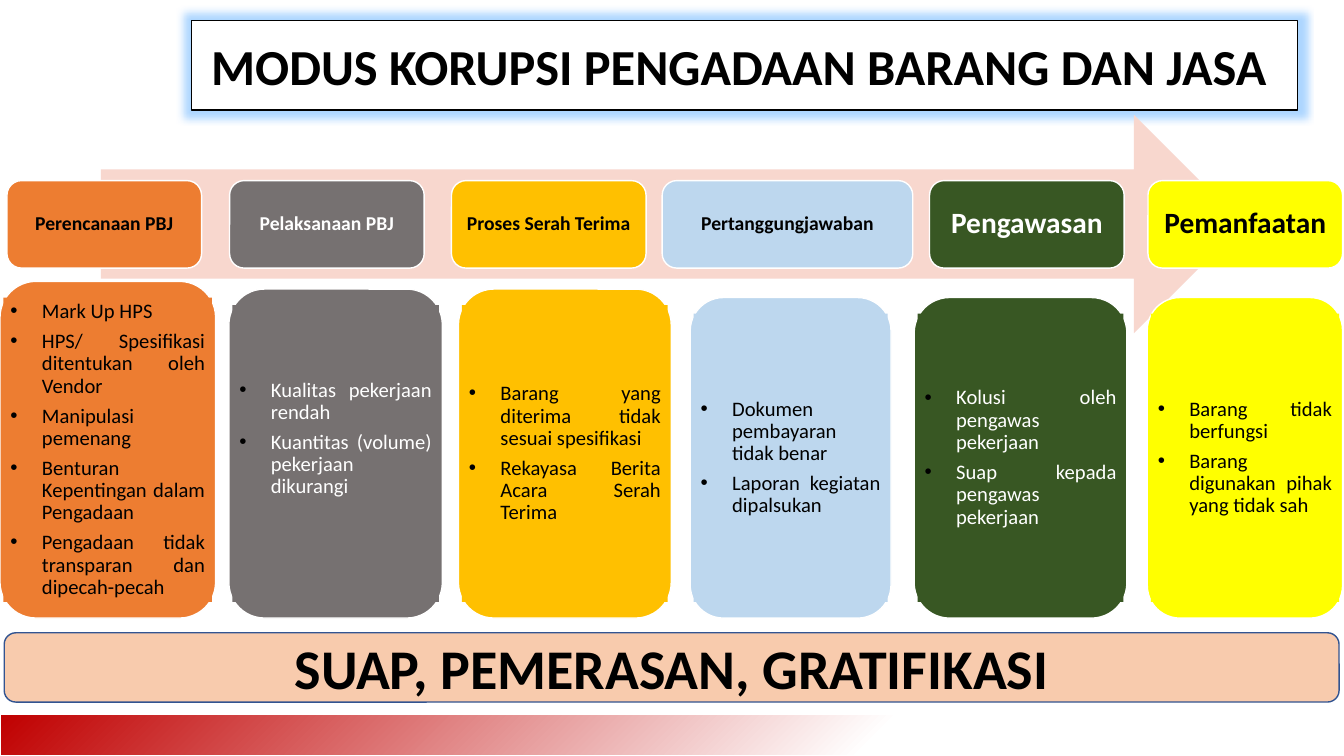
from lxml.etree import SubElement
from pptx import Presentation
from pptx.dml.color import RGBColor
from pptx.enum.shapes import MSO_SHAPE
from pptx.enum.text import MSO_ANCHOR, MSO_AUTO_SIZE, PP_ALIGN
from pptx.oxml import parse_xml
from pptx.oxml.ns import nsdecls, qn
from pptx.util import Pt

HUES = {
    "orange": "ED7D31", "gray": "767171", "gold": "FFC000",
    "sky": "BDD7EE", "green": "385723", "yellow": "FFFF00",
    "rose": "F8D7CE", "peach": "F8CBAD", "navy": "325491",
    "red": "C00000", "glow": "3399FF", "white": "FFFFFF", "black": "000000",
}
ROUND = MSO_SHAPE.ROUNDED_RECTANGLE

STAGES = [
    ("Perencanaan PBJ", 14, "orange", "black", (5, 139), (0, 201, 154), 5,
     ["Mark Up HPS", "HPS/ Spesifikasi ditentukan oleh Vendor",
      "Manipulasi pemenang", "Benturan Kepentingan dalam Pengadaan",
      "Pengadaan tidak transparan dan dipecah-pecah"]),
    ("Pelaksanaan PBJ", 14, "gray", "white", (164, 139), (163.5, 206.5, 152.5), 26,
     ["Kualitas pekerjaan rendah", "Kuantitas (volume) pekerjaan dikurangi"]),
    ("Proses Serah Terima", 14, "gold", "black", (322.5, 139), (327.5, 206.5, 152), 5,
     ["Barang yang diterima tidak sesuai spesifikasi",
      "Rekayasa Berita Acara Serah Terima"]),
    ("Pertanggungjawaban", 14, "sky", "black", (473, 179), (493, 212.5, 143.5), 5,
     ["Dokumen pembayaran tidak benar", "Laporan kegiatan dipalsukan"]),
    ("Pengawasan", 21, "green", "white", (664, 139), (653, 212.5, 152), 5,
     ["Kolusi oleh pengawas pekerjaan", "Suap kepada pengawas pekerjaan"]),
    ("Pemanfaatan", 21, "yellow", "black", (820, 139), (819.5, 212.5, 139.5), 5,
     ["Barang tidak berfungsi", "Barang digunakan pihak yang tidak sah"]),
]


def put(item, values):
    for name, value in values.items():
        setattr(item, name, value)


def tint(name):
    return RGBColor.from_string(HUES[name])


def paint(shape, fill, line=None):
    shape.fill.solid()
    shape.fill.fore_color.rgb = tint(fill)
    if line:
        shape.line.color.rgb = tint(line)
        shape.line.width = Pt(1)
    else:
        shape.line.fill.background()


def draw(slide, kind, box, fill, line=None):
    shape = slide.shapes.add_shape(kind, *map(Pt, box))
    shape.shadow.inherit = False
    paint(shape, fill, line)
    return shape


def write(shape, lines, size, color, bold=True, pad=(4, 4, 4, 4), list_item=False,
          leading=0.9):
    frame = shape.text_frame
    sides = ("margin_left", "margin_top", "margin_right", "margin_bottom")
    put(frame, {"word_wrap": True, "auto_size": MSO_AUTO_SIZE.NONE,
                "vertical_anchor": MSO_ANCHOR.MIDDLE,
                **dict(zip(sides, map(Pt, pad)))})
    for count, line in enumerate(lines):
        para = frame.add_paragraph() if count else frame.paragraphs[0]
        para.text = line
        if list_item:
            bullet(para)
        put(para, {"alignment": PP_ALIGN.JUSTIFY if list_item else PP_ALIGN.CENTER,
                   "line_spacing": leading, "space_before": Pt(0),
                   "space_after": Pt(5.5 if list_item else 0)})
        put(para.font, {"name": "Calibri", "size": Pt(size), "bold": bold})
        para.font.color.rgb = tint(color)


def bullet(para):
    props = para._p.get_or_add_pPr()
    props.set("marL", str(Pt(22.5)))
    props.set("indent", str(-Pt(22.5)))
    hue = SubElement(props, qn("a:buClr"))
    SubElement(hue, qn("a:srgbClr"), val=HUES["black"])
    SubElement(props, qn("a:buFont"), typeface="Arial")
    SubElement(props, qn("a:buChar"), char="•")


def add_title(slide, box):
    title = slide.shapes.title
    put(title, dict(zip(("left", "top", "width", "height"), map(Pt, box))))
    props = title._element.spPr
    shape = SubElement(props, qn("a:prstGeom"), prst="roundRect")
    SubElement(shape, qn("a:avLst"))
    paint(title, "white", "black")
    effects = SubElement(props, qn("a:effectLst"))
    glow = SubElement(effects, qn("a:glow"), rad=str(Pt(11)))
    hue = SubElement(glow, qn("a:srgbClr"), val=HUES["glow"])
    SubElement(hue, qn("a:alpha"), val="40000")
    write(title, ["MODUS KORUPSI PENGADAAN BARANG DAN JASA"], 36, "black",
          pad=(0, 5, 8, 5), leading=1.0)


def add_strip(slide, box):
    strip = draw(slide, MSO_SHAPE.RECTANGLE, box, "white", "white")
    props = strip._element.spPr
    stops = [(0, "red"), (0, "white"), (35, "white"), (100, "red")]
    marks = "".join(f'<a:gs pos="{spot * 1000}"><a:srgbClr val="{HUES[name]}"/></a:gs>'
                    for spot, name in stops)
    blend = parse_xml(
        f'<a:gradFill {nsdecls("a")}><a:gsLst>{marks}</a:gsLst><a:path path="circle">'
        '<a:fillToRect l="100000" t="100000"/></a:path></a:gradFill>')
    props.replace(props.find(qn("a:solidFill")), blend)


def add_head(slide, box, label, size, fill, ink):
    head = draw(slide, ROUND, box, fill, "white")
    write(head, [label], size, ink)


def add_card(slide, box, items, fill, ink, foot):
    left, top, width, height = box
    draw(slide, ROUND, box, fill, "white")
    inner = (left + 2.5, top + 11.5, width - 5, height - 23)
    panel = draw(slide, MSO_SHAPE.RECTANGLE, inner, fill)
    write(panel, items, 14.7, ink, False, (5, 5, 5, foot), True)


def add_stages(slide, box):
    left, top, width, height = box
    draw(slide, MSO_SHAPE.RIGHT_ARROW, (left + 72, top, 816, 156), "rose")
    for label, size, fill, ink, head, card, foot, items in STAGES:
        start, span = head
        add_head(slide, (left + start, top + 47, span, 62.5), label, size, fill, ink)
        start, rise, span = card
        add_card(slide, (left + start, rise, span, top + height - rise),
                 items, fill, ink, foot)


def add_banner(slide, box):
    banner = draw(slide, ROUND, box, "peach", "navy")
    write(banner, ["SUAP, PEMERASAN, GRATIFIKASI"], 40, "black",
          pad=(9, 5, 9, 5), leading=1.0)


def main():
    deck = Presentation()
    put(deck, {"slide_width": Pt(960), "slide_height": Pt(540)})
    slide = deck.slides.add_slide(deck.slide_layouts[5])
    add_strip(slide, (0, 510.5, 960, 29.5))
    add_stages(slide, (0, 82, 960, 359.5))
    add_banner(slide, (3, 452, 953.5, 49.5))
    add_title(slide, (137, 14.5, 790, 64))
    deck.save("out.pptx")


if __name__ == "__main__":
    main()
